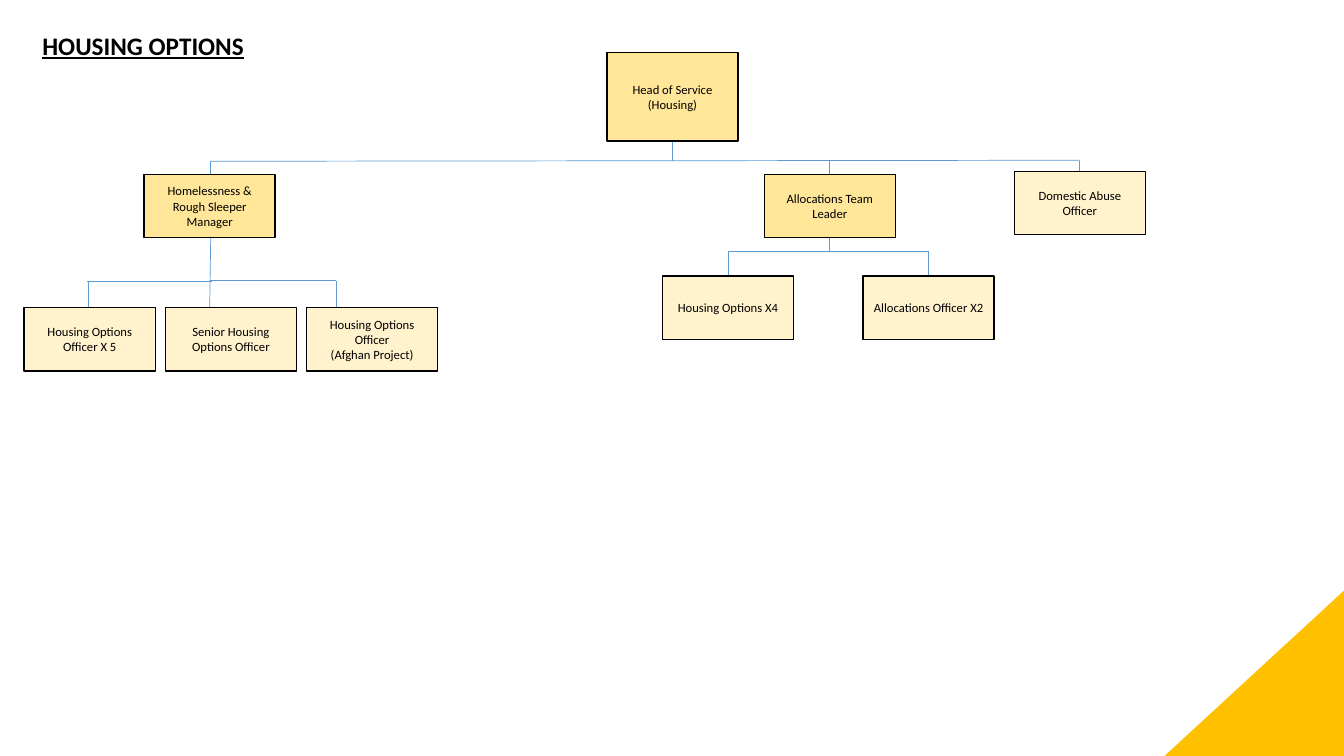
from pptx import Presentation
from pptx.dml.color import RGBColor
from pptx.enum.shapes import MSO_CONNECTOR, MSO_SHAPE
from pptx.enum.text import MSO_ANCHOR, MSO_AUTO_SIZE, PP_ALIGN
from pptx.oxml.ns import qn
from pptx.util import Inches, Pt
from lxml.etree import SubElement

BLACK = RGBColor(0x00, 0x00, 0x00)
BLUE = RGBColor(0x5B, 0x9B, 0xD5)
GOLD = RGBColor(0xFF, 0xE6, 0x99)
CREAM = RGBColor(0xFF, 0xF2, 0xCC)
AMBER = RGBColor(0xFF, 0xC0, 0x00)

WIDE, TALL = 1.3, 0.63


class Chart:
    """Style and drawing methods for one organisation chart slide."""

    font = "Calibri"

    def __init__(self, deck):
        self.slide = deck.slides.add_slide(deck.slide_layouts[5])
        self.shapes = self.slide.shapes

    def style(self, para, size, align):
        para.alignment = align
        para.font.name = self.font
        para.font.size = Pt(size)
        para.font.color.rgb = BLACK

    def title(self, text, left, top, width, height):
        head = self.shapes.title
        head.left, head.top = Inches(left), Inches(top)
        head.width, head.height = Inches(width), Inches(height)
        frame = head.text_frame
        frame.text = text
        frame.auto_size = MSO_AUTO_SIZE.NONE
        frame.vertical_anchor = MSO_ANCHOR.TOP
        para = frame.paragraphs[0]
        self.style(para, 18, PP_ALIGN.LEFT)
        para.font.bold = para.font.underline = True

    def line(self, x1, y1, x2, y2):
        link = self.shapes.add_connector(
            MSO_CONNECTOR.STRAIGHT, Inches(x1), Inches(y1), Inches(x2), Inches(y2))
        link.line.color.rgb = BLUE
        link.line.width = Pt(0.5)
        SubElement(link.element.spPr, qn("a:effectLst"))

    def shape(self, kind, left, top, width, height, fill):
        item = self.shapes.add_shape(
            kind, Inches(left), Inches(top), Inches(width), Inches(height))
        item.shadow.inherit = False
        item.fill.solid()
        item.fill.fore_color.rgb = fill
        return item

    def box(self, text, left, top, fill, height=TALL):
        item = self.shape(MSO_SHAPE.RECTANGLE, left, top, WIDE, height, fill)
        item.line.color.rgb = BLACK
        item.line.width = Pt(1)
        frame = item.text_frame
        frame.text = text
        frame.word_wrap = True
        frame.vertical_anchor = MSO_ANCHOR.MIDDLE
        for para in frame.paragraphs:
            self.style(para, 9, PP_ALIGN.CENTER)

    def corner(self, left, top, width, height):
        item = self.shape(MSO_SHAPE.RIGHT_TRIANGLE, left, top, width, height, AMBER)
        item.line.fill.background()
        item.element.spPr.get_or_add_xfrm().set("flipH", "1")


def main():
    deck = Presentation()
    deck.slide_width, deck.slide_height = Inches(13.33), Inches(7.5)
    chart = Chart(deck)
    chart.title("HOUSING OPTIONS", 0.32, 0.25, 3.34, 0.4)

    # Links from the head of service to the second row
    chart.line(6.67, 1.4, 6.67, 1.6)
    chart.line(2.09, 1.6, 10.71, 1.59)
    for x, foot in ((2.09, 1.73), (8.23, 1.73), (10.71, 1.7)):
        chart.line(x, 1.6, x, foot)

    # Links to the homelessness team
    chart.line(2.09, 2.36, 2.08, 3.05)
    chart.line(0.86, 2.79, 2.1, 2.79)
    chart.line(2.08, 2.78, 3.33, 2.78)
    for x in (0.88, 3.34):
        chart.line(x, 2.79, x, 3.05)

    # Links to the allocations team
    chart.line(8.23, 2.36, 8.23, 2.5)
    chart.line(7.22, 2.49, 9.21, 2.49)
    for x in (7.22, 9.21):
        chart.line(x, 2.49, x, 2.74)

    # Leaders
    chart.box("Head of Service (Housing)", 6.02, 0.52, GOLD, 0.88)
    chart.box("Homelessness & Rough Sleeper Manager", 1.43, 1.73, GOLD)
    chart.box("Allocations Team Leader", 7.58, 1.73, GOLD)
    chart.box("Domestic Abuse Officer", 10.06, 1.7, CREAM)

    # Homelessness team
    team = ("Housing Options Officer X 5", "Senior Housing Options Officer",
            "Housing Options Officer\n(Afghan Project)")
    for i, role in enumerate(team):
        chart.box(role, 0.24 + 1.4 * i, 3.05, CREAM)

    # Allocations team
    for i, role in enumerate(("Housing Options X4", "Allocations Officer X2")):
        chart.box(role, 6.57 + 1.99 * i, 2.74, CREAM)

    # Corner accent
    chart.corner(11.55, 5.86, 1.78, 1.64)

    deck.save("out.pptx")


if __name__ == "__main__":
    main()
